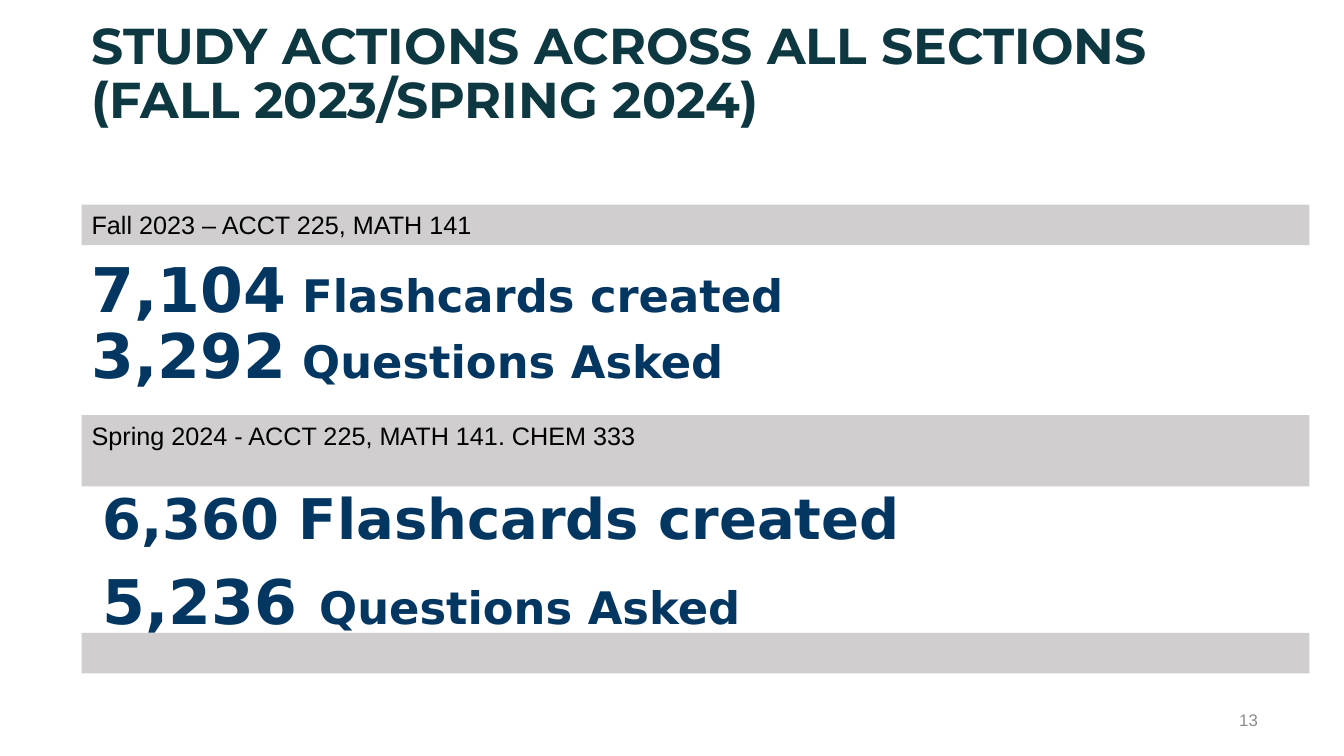
from dataclasses import dataclass

from pptx import Presentation
from pptx.dml.color import RGBColor
from pptx.enum import shapes, text
from pptx.util import Cm, Pt


@dataclass(frozen=True)
class Theme:
    heading: RGBColor = RGBColor(0x0D, 0x38, 0x41)
    figure: RGBColor = RGBColor(0x04, 0x36, 0x62)
    band: RGBColor = RGBColor(0xD0, 0xCE, 0xCE)
    band_text: RGBColor = RGBColor(0, 0, 0)
    number: RGBColor = RGBColor(0x8C, 0x8C, 0x8C)
    heading_font: str = "Montserrat"
    figure_font: str = "DejaVu Sans"
    body_font: str = "Arial"
    figure_size: int = 44
    flat_figure_size: int = 40
    heading_size: int = 36
    label_size: int = 32
    band_size: int = 18
    number_size: int = 12


THEME = Theme()
LEFT = Cm(2.06)
INDENTED_LEFT = Cm(2.34)
BAND_WIDTH = Cm(30.94)


def add_run(paragraph, wording, font, size, color, bold=False):
    run = paragraph.add_run()
    run.text = wording
    run.font.name = font
    run.font.size = Pt(size)
    run.font.bold = bold
    run.font.color.rgb = color


def format_title(slide, wording):
    title = slide.shapes.title
    title.left, title.top = LEFT, Cm(0.05)
    title.width, title.height = BAND_WIDTH, Cm(3.68)
    frame = title.text_frame
    frame.auto_size = text.MSO_AUTO_SIZE.NONE
    frame.vertical_anchor = text.MSO_ANCHOR.MIDDLE
    paragraph = frame.paragraphs[0]
    paragraph.alignment = text.PP_ALIGN.LEFT
    paragraph.line_spacing = 0.9
    add_run(paragraph, wording, THEME.heading_font, THEME.heading_size, THEME.heading, True)


def add_band(slide, top, height, wording=""):
    band = slide.shapes.add_shape(
        shapes.MSO_SHAPE.RECTANGLE, LEFT, top, BAND_WIDTH, height)
    band.shadow.inherit = False
    band.fill.solid()
    band.fill.fore_color.rgb = THEME.band
    band.line.fill.background()
    if wording:
        frame = band.text_frame
        frame.word_wrap = True
        frame.vertical_anchor = text.MSO_ANCHOR.TOP
        paragraph = frame.paragraphs[0]
        paragraph.alignment = text.PP_ALIGN.LEFT
        add_run(paragraph, wording, THEME.body_font, THEME.band_size, THEME.band_text)


def add_text_box(slide, left, top, width, height):
    box = slide.shapes.add_textbox(left, top, width, height)
    box.text_frame.word_wrap = True
    return box.text_frame


def add_statistic(slide, left, top, *pieces):
    frame = add_text_box(slide, left, top, Cm(22.45), Cm(2.13))
    for wording, size in pieces:
        add_run(frame.paragraphs[0], wording, THEME.figure_font, size, THEME.figure, True)


def add_slide_number(slide, number):
    frame = add_text_box(slide, Cm(24.33), Cm(17.63), Cm(7.62), Cm(1.02))
    frame.vertical_anchor = text.MSO_ANCHOR.MIDDLE
    paragraph = frame.paragraphs[0]
    paragraph.alignment = text.PP_ALIGN.RIGHT
    add_run(paragraph, number, THEME.body_font, THEME.number_size, THEME.number)


def main():
    presentation = Presentation()
    presentation.slide_width, presentation.slide_height = Cm(33.87), Cm(19.05)
    slide = presentation.slides.add_slide(presentation.slide_layouts[5])

    format_title(slide, "STUDY ACTIONS ACROSS ALL SECTIONS (FALL 2023/SPRING 2024)")

    add_band(slide, Cm(5.16), Cm(1.02), "Fall 2023 – ACCT 225, MATH 141")
    add_statistic(slide, LEFT, Cm(6.2),
                  ("7,104", THEME.figure_size), (" Flashcards created", THEME.label_size))
    add_statistic(slide, LEFT, Cm(7.87),
                  ("3,292", THEME.figure_size), (" Questions Asked", THEME.label_size))

    add_band(slide, Cm(10.46), Cm(1.8), "Spring 2024 - ACCT 225, MATH 141. CHEM 333")
    add_statistic(slide, INDENTED_LEFT, Cm(12.07),
                  ("6,360 Flashcards created", THEME.flat_figure_size))
    add_statistic(slide, INDENTED_LEFT, Cm(14.05),
                  ("5,236 ", THEME.figure_size), ("Questions Asked", THEME.label_size))
    add_band(slide, Cm(15.95), Cm(1.02))

    add_slide_number(slide, "13")
    presentation.save("out.pptx")


if __name__ == "__main__":
    main()
